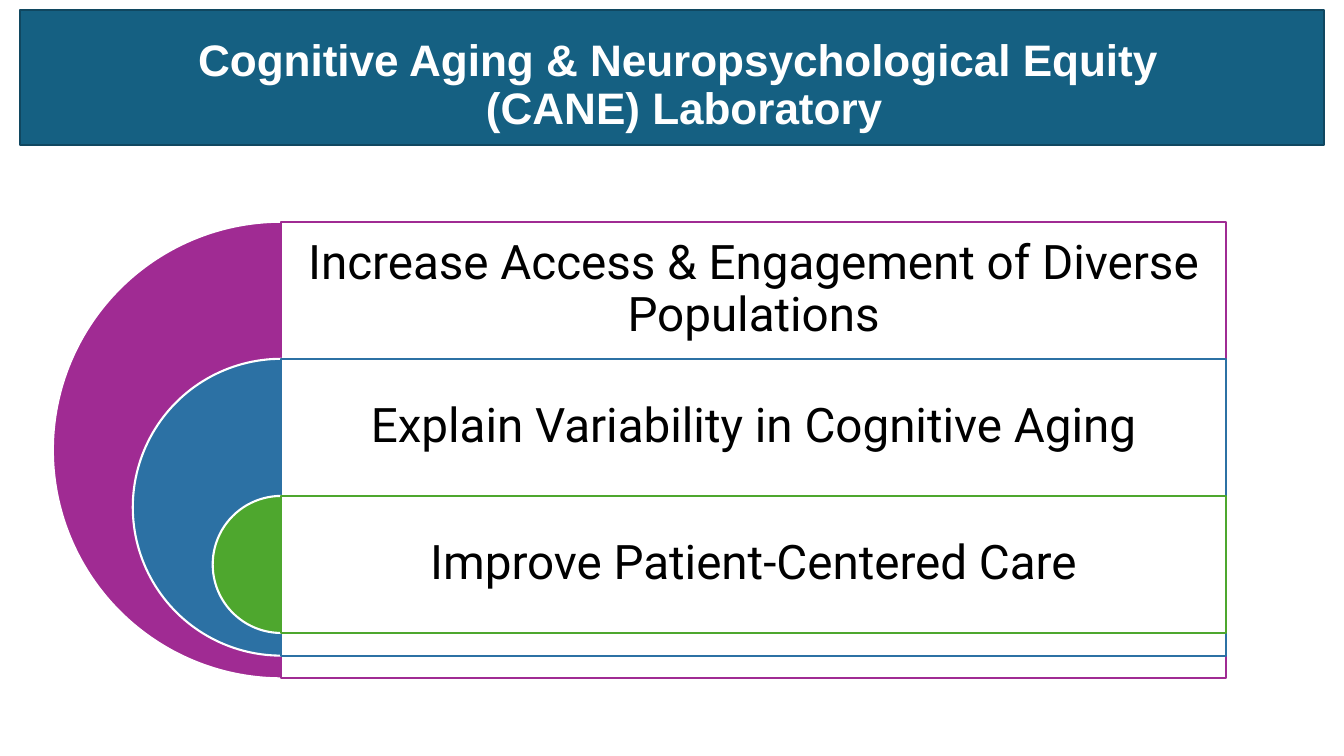
from lxml import etree
from pptx import Presentation
from pptx.dml.color import RGBColor
from pptx.enum.shapes import MSO_SHAPE
from pptx.enum.text import MSO_ANCHOR, PP_ALIGN
from pptx.oxml.ns import qn
from pptx.util import Inches, Pt

PIE, RECTANGLE = MSO_SHAPE.PIE, MSO_SHAPE.RECTANGLE
MIDDLE, BOTTOM = MSO_ANCHOR.MIDDLE, MSO_ANCHOR.BOTTOM
CENTER = PP_ALIGN.CENTER

COLORS = {
    "white": "FFFFFF",
    "black": "000000",
    "banner": "156082",
    "banner_edge": "104760",
    "purple": "A02B93",
    "blue": "2C71A4",
    "green": "4EA72E",
}

GOALS = [
    ("Increase Access & Engagement of Diverse Populations", "purple"),
    ("Explain Variability in Cognitive Aging", "blue"),
    ("Improve Patient-Centered Care", "green"),
]

# Nested goals: each one starts a row lower and ends a little higher
CENTER_X, GOALS_TOP = 2.79, 2.2
ROW_HEIGHT, PANEL_WIDTH = 1.36, 9.37
OUTER_DIAMETER, INNER_DIAMETER = 4.53, 1.36


def color(name):
    return RGBColor.from_string(COLORS[name])


def write(frame, text, *, font, size, fill, bold=False):
    """Fill a text frame with one centred paragraph; a newline is a line break."""
    para = frame.paragraphs[0]
    para.text = text.replace("\n", "\v")
    para.alignment = CENTER
    para.line_spacing = 0.9
    for span in para.runs:
        span.font.name = font
        span.font.size = Pt(size)
        span.font.bold = bold
        span.font.color.rgb = color(fill)


class SlidePainter:
    line_width = 1.5

    def __init__(self, page):
        self.page = page

    def shape(self, kind, left, top, width, height, fill, line, opacity=None):
        item = self.page.shapes.add_shape(
            kind, Inches(left), Inches(top), Inches(width), Inches(height))
        item.shadow.inherit = False
        item.fill.solid()
        item.fill.fore_color.rgb = color(fill)
        item.line.color.rgb = color(line)
        item.line.width = Pt(self.line_width)
        if opacity is not None:
            fill_color = item._element.spPr.find(qn("a:solidFill"))[0]
            etree.SubElement(fill_color, qn("a:alpha"), val=str(opacity * 1000))
        return item

    def half_disc(self, center_x, top, diameter, fill):
        disc = self.shape(PIE, center_x - diameter / 2, top, diameter, diameter,
                          fill, "white")
        disc.adjustments[0] = 54
        disc.adjustments[1] = 162

    def text(self, left, top, width, height, text, anchor, inset=None, **style):
        box = self.page.shapes.add_textbox(
            Inches(left), Inches(top), Inches(width), Inches(height))
        frame = box.text_frame
        frame.word_wrap = True
        frame.vertical_anchor = anchor
        if inset is not None:
            frame.margin_left = frame.margin_right = Inches(inset)
            frame.margin_top = frame.margin_bottom = Inches(inset)
        write(frame, text, **style)


def main():
    deck = Presentation()
    deck.slide_width, deck.slide_height = Inches(13.33), Inches(7.5)
    painter = SlidePainter(deck.slides.add_slide(deck.slide_layouts[6]))

    # Goals
    shrink = (OUTER_DIAMETER - INNER_DIAMETER) / (len(GOALS) - 1)
    for index, (goal, tint) in enumerate(GOALS):
        top = GOALS_TOP + index * ROW_HEIGHT
        diameter = OUTER_DIAMETER - index * shrink
        painter.half_disc(CENTER_X, top, diameter, tint)
        painter.shape(RECTANGLE, CENTER_X, top, PANEL_WIDTH, diameter,
                      "white", tint, opacity=90)
        painter.text(CENTER_X, top, PANEL_WIDTH, ROW_HEIGHT, goal, MIDDLE,
                     inset=0.14, font="Roboto", size=34, fill="black")

    # Title banner
    painter.shape(RECTANGLE, 0.2, 0.1, 12.93, 1.34, "banner", "banner_edge")
    painter.text(0.44, 0.51, 12.69, 0.87,
                 "Cognitive Aging & Neuropsychological Equity \n(CANE) Laboratory",
                 BOTTOM, font="Arial", size=31.5, fill="white", bold=True)

    deck.save("out.pptx")


if __name__ == "__main__":
    main()
